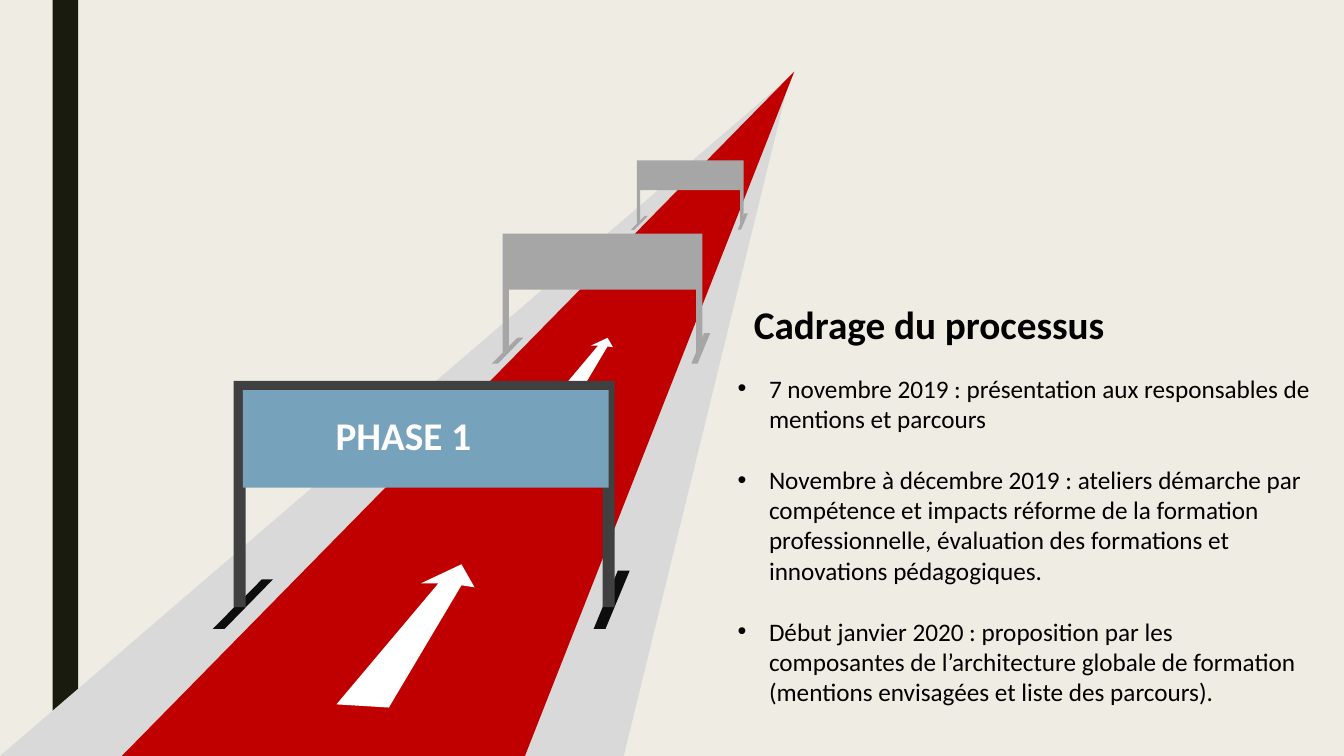
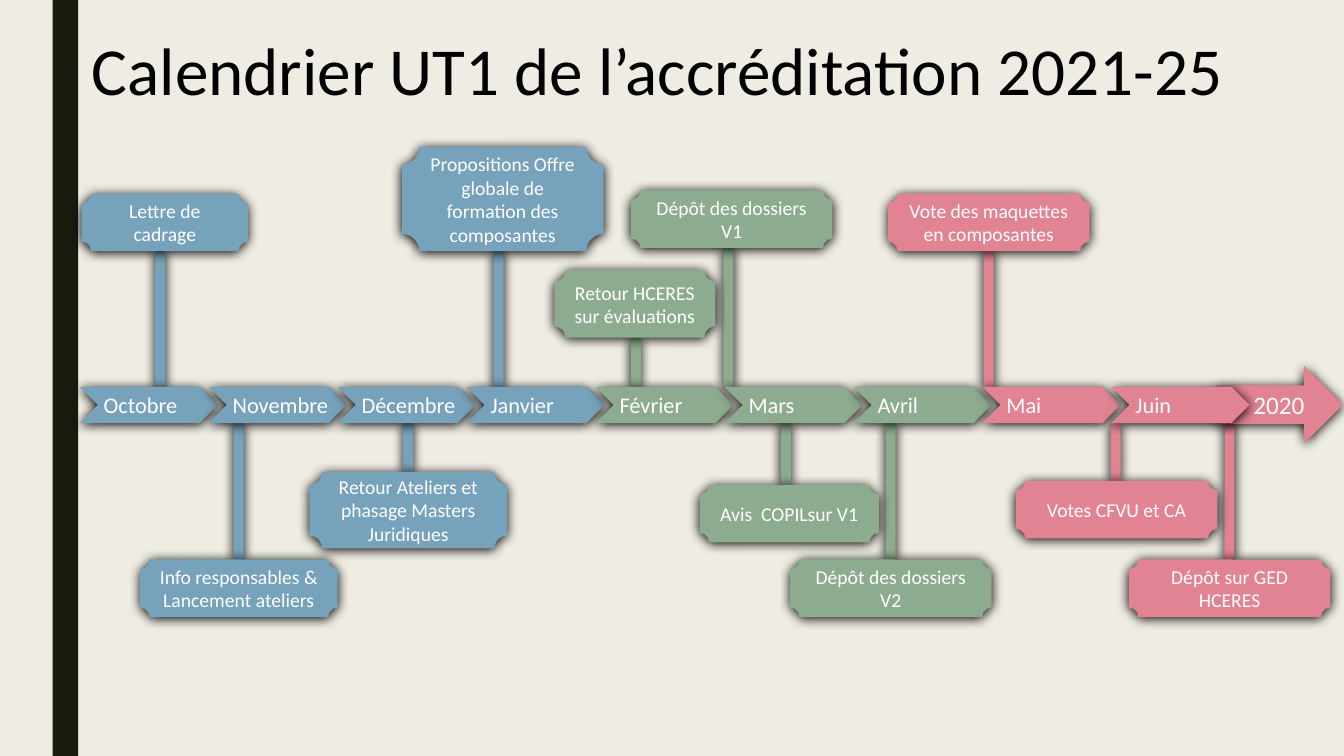
from pptx import Presentation
from pptx.dml.color import RGBColor
from pptx.enum.shapes import MSO_SHAPE as SHAPE
from pptx.enum.text import MSO_ANCHOR as ANCHOR, MSO_AUTO_SIZE as AUTO, PP_ALIGN as ALIGN
from pptx.oxml import parse_xml
from pptx.oxml.ns import nsdecls, qn
from pptx.util import Cm, Pt

FONT = "Calibri"
WIDTH, HEIGHT = 33.87, 19.05
COLORS = {
    "background": "EFEDE3", "band": "191B0E", "text": "000000", "white": "FFFFFF",
    "verge": "D9D9D9", "road": "C00000",
    "faded": "A6A6A6", "frame": "404040", "foot": "0D0D0D",
    "blue": "77A2BB", "green": "8DAB8E", "pink": "E28394",
}

STEPS = [
    "7 novembre 2019 : présentation aux responsables de mentions et parcours",
    "Novembre à décembre 2019 : ateliers démarche par compétence et impacts réforme "
    "de la formation professionnelle, évaluation des formations et innovations "
    "pédagogiques.",
    "Début janvier 2020 : proposition par les composantes de l’architecture globale "
    "de formation (mentions envisagées et liste des parcours).",
]

MONTHS = [
    ("Octobre", "blue"), ("Novembre", "blue"), ("Décembre", "blue"),
    ("Janvier", "blue"), ("Février", "green"), ("Mars", "green"),
    ("Avril", "green"), ("Mai", "pink"), ("Juin", "pink"),
]

# text, colour, box (left, top, width, height), centre of the stem
MILESTONES = [
    ("Lettre de cadrage", "blue", (2.06, 4.88, 4.19, 1.45), 4.04),
    ("Info responsables &\nLancement ateliers", "blue", (3.53, 14.1, 4.98, 1.45), 6.02),
    ("Dépôt des dossiers V1", "green", (15.9, 4.8, 5.08, 1.45), 18.36),
    ("Dépôt des dossiers V2", "green", (19.91, 14.1, 5.08, 1.45), 22.45),
    ("Propositions Offre globale de formation des composantes", "blue",
     (10.13, 3.71, 5.08, 2.62), 12.57),
    ("Avis  COPILsur V1", "green", (17.63, 12.22, 4.52, 1.45), 19.81),
    ("Vote des maquettes en composantes", "pink", (22.38, 4.88, 5.08, 1.45), 24.92),
    ("Dépôt sur GED HCERES", "pink", (28.45, 14.1, 5.08, 1.45), 30.99),
    ("Votes CFVU et CA", "pink", (25.6, 12.12, 5.08, 1.45), 28.12),
    ("Retour Ateliers et phasage Masters Juridiques", "blue",
     (7.8, 11.89, 4.98, 1.93), 10.29),
    ("Retour HCERES sur évaluations", "green", (13.97, 6.81, 4.06, 1.7), 16.03),
]


def rgb(name):
    return RGBColor.from_string(COLORS[name])


def write(sp, lines, size=14, color="white", bold=False, align=ALIGN.CENTER,
          anchor=ANCHOR.MIDDLE, margins=(0.25, 0.13, 0.25, 0.13), gap=0, hanging=0):
    """Fill a shape with one paragraph per line; margins are left, top, right, bottom."""
    tf = sp.text_frame
    tf.word_wrap, tf.auto_size, tf.vertical_anchor = True, AUTO.NONE, anchor
    tf.margin_left, tf.margin_top, tf.margin_right, tf.margin_bottom = map(Cm, margins)
    for i, line in enumerate(lines):
        p = tf.paragraphs[0] if i == 0 else tf.add_paragraph()
        p.alignment = align
        p.space_before = Pt(gap if i else 0)
        if hanging:
            pPr = p._p.get_or_add_pPr()
            pPr.set("marL", str(Cm(hanging)))
            pPr.set("indent", str(-Cm(hanging)))
        r = p.add_run()
        r.text = line
        r.font.name, r.font.size, r.font.bold = FONT, Pt(size), bold
        r.font.color.rgb = rgb(color)


def place(sp, box):
    sp.left, sp.top, sp.width, sp.height = map(Cm, box)


def paint(sp, color, shadow=False):
    sp.fill.solid()
    sp.fill.fore_color.rgb = rgb(color)
    sp.line.fill.background()
    sp.shadow.inherit = False
    if shadow:
        effects = sp._element.spPr.find(qn("a:effectLst"))
        effects.append(parse_xml(
            f'<a:outerShdw {nsdecls("a")} blurRad="{Pt(8.5)}" dist="{Pt(1)}" '
            'dir="5400000" algn="ctr" rotWithShape="0">'
            '<a:srgbClr val="000000"/></a:outerShdw>'))
    return sp


def add_preset(s, kind, box, color, shadow=False):
    return paint(s.shapes.add_shape(kind, *map(Cm, box)), color, shadow)


def add_polygon(s, points, color, origin=(0, 0), scale=1):
    """Draw a closed outline; points are scaled, then moved to the origin."""
    start, *rest = [(Cm(origin[0] + x * scale), Cm(origin[1] + y * scale))
                    for x, y in points]
    builder = s.shapes.build_freeform(*start)
    builder.add_line_segments(rest, close=True)
    return paint(builder.convert_to_shape(), color)


def add_title(s, text, box, **style):
    place(s.shapes.title, box)
    write(s.shapes.title, [text], color="text", align=ALIGN.LEFT, **style)


def style_master(prs, s):
    """Put the background and the side band on the master."""
    master = prs.slide_master
    fill = master.background.fill
    fill.solid()
    fill.fore_color.rgb = rgb("background")
    band = add_preset(s, SHAPE.RECTANGLE, (1.33, 0, 0.64, HEIGHT), "band")
    master.shapes._spTree.append(band._element)


def add_road(s):
    add_polygon(s, [(0, HEIGHT), (19.91, 1.93), (15.72, HEIGHT)], "verge")
    add_polygon(s, [(20.02, 1.8), (13.23, HEIGHT), (3.07, HEIGHT)], "road")
    arrow = [(0, 0), (2.57, -3.05), (2.13, -3.05), (3.15, -3.53),
             (3.48, -2.95), (3.15, -3), (1.32, 0.08)]
    add_polygon(s, arrow, "white", (8.48, 17.75))
    add_polygon(s, arrow, "white", (14.02, 9.96), 0.41)


def add_gate(s, x, y, width, frame="faded", foot="faded", panel="faded"):
    """Draw a gate over the road and return its panel."""
    w, h, bar = 9.6, 5.7, 0.3
    k = width / w
    feet = [
        [(9.68, 4.78), (9.98, 4.78), (9.37, 6.25), (9.07, 6.25)],
        [(0.71, 5), (0.99, 5), (-0.23, 6.25), (-0.53, 6.25)],
    ]
    for points in feet:
        add_polygon(s, points, foot, (x, y), k)
    add_polygon(s, [(0, 0), (w, 0), (w, h), (w - bar, h), (w - bar, bar),
                    (bar, bar), (bar, h), (0, h)], frame, (x, y), k)
    inset = 0.23 * k
    return add_preset(s, SHAPE.RECTANGLE,
                      (x + inset, y + inset, 9.22 * k, 2.46 * k), panel)


def build_phase(s):
    add_title(s, "Cadrage du processus", (18.75, 7.44, 13, 1.45), size=28, bold=True)
    body = s.placeholders[1]
    place(body, (18.34, 9.27, 14.96, 8.71))
    write(body, STEPS, size=18, color="text", align=ALIGN.LEFT, anchor=ANCHOR.TOP,
          gap=22, hanging=0.79)
    add_road(s)
    add_gate(s, 12.67, 5.89, 5.03)
    add_gate(s, 16.05, 4.04, 2.69)
    panel = add_gate(s, 5.89, 9.6, 9.6, frame="frame", foot="foot", panel="blue")
    write(panel, ["PHASE 1"], size=28, bold=True, align=ALIGN.LEFT,
          margins=(2.34, 0, 0, 0.2))


def add_stem(s, box, center, color, axis):
    """Link a milestone box to the axis, given as its top and bottom."""
    top, bottom = box[1], box[1] + box[3]
    start, end = (bottom, axis[0]) if bottom < axis[0] else (axis[1], top)
    add_preset(s, SHAPE.ROUNDED_RECTANGLE, (center - 0.13, start, 0.25, end - start),
               color, shadow=True)


def add_months(s, x, y, width, height, step):
    year = add_preset(s, SHAPE.STRIPED_RIGHT_ARROW,
                      (x + 28.65, y - 0.53, 3.18, 1.96), "pink", shadow=True)
    write(year, ["2020"], size=18, margins=(0.4, 0.13, 0.25, 0.13))
    for i, (month, color) in enumerate(MONTHS):
        chevron = add_preset(s, SHAPE.CHEVRON, (x + i * step, y, width, height),
                             color, shadow=True)
        write(chevron, [month], size=16, align=ALIGN.LEFT, margins=(0.15, 0, 0, 0))


def build_calendar(s):
    add_title(s, "Calendrier UT1 de l’accréditation 2021-25",
              (2.06, 0.58, 30, 2.31), size=48)
    y, height = 9.75, 0.91
    for _, color, box, center in MILESTONES:
        add_stem(s, box, center, color, (y, y + height))
    add_months(s, 2.01, y, 3.48, height, 3.25)
    for text, color, box, _ in MILESTONES:
        plaque = add_preset(s, SHAPE.PLAQUE, box, color, shadow=True)
        write(plaque, text.split("\n"))


def main():
    prs = Presentation()
    prs.slide_width, prs.slide_height = Cm(WIDTH), Cm(HEIGHT)
    phase = prs.slides.add_slide(prs.slide_layouts[1])
    style_master(prs, phase)
    build_phase(phase)
    build_calendar(prs.slides.add_slide(prs.slide_layouts[5]))
    prs.save("out.pptx")


if __name__ == "__main__":
    main()
